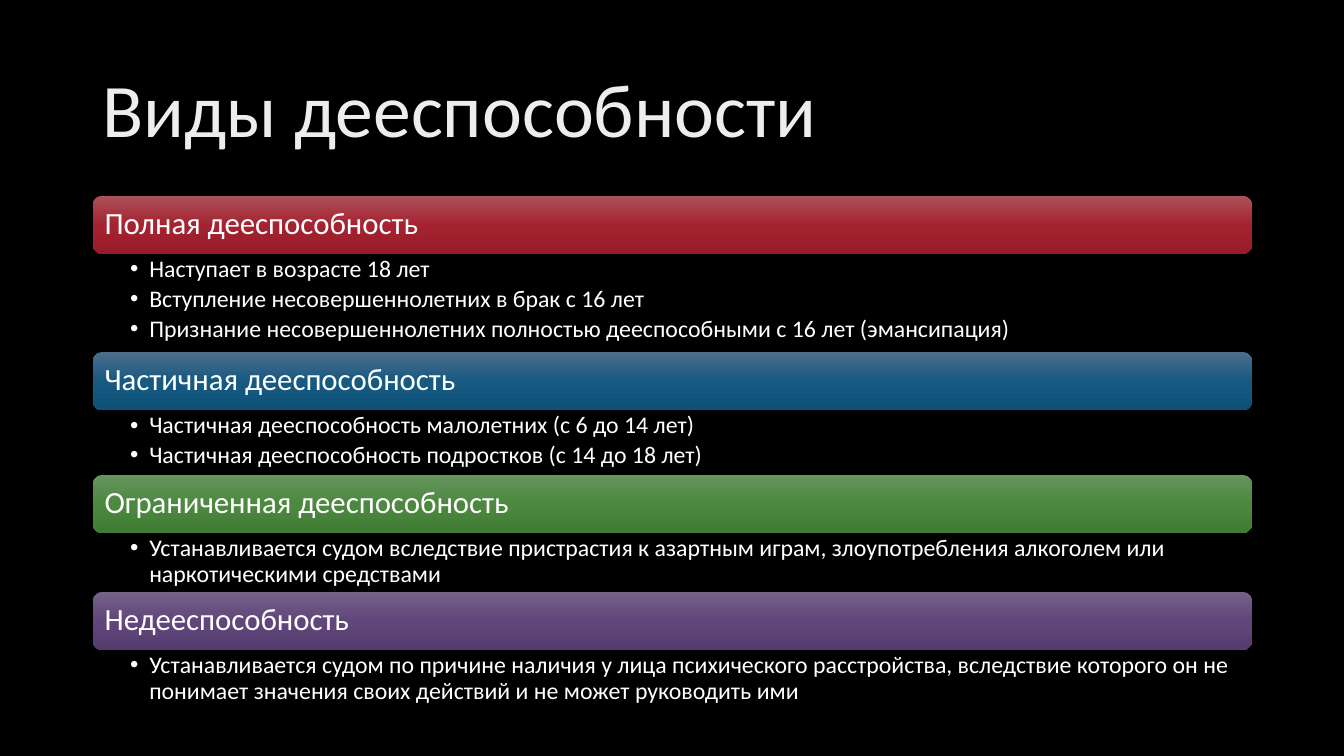
from copy import deepcopy

from pptx import Presentation
from pptx.dml.color import RGBColor
from pptx.enum.shapes import MSO_SHAPE
from pptx.enum.text import MSO_ANCHOR, MSO_AUTO_SIZE, PP_ALIGN
from pptx.oxml.ns import qn
from pptx.util import Emu, Pt

COLOURS = {
    "background": "000000",
    "text": "FFFFFF",
    "title": ["BFBFBF", "EDEDED", "FFFFFF"],
    "red": ["AB5258", "A52331", "981A28"],
    "blue": ["4E6E8C", "165981", "0F5077"],
    "green": ["67945F", "4C883F", "417C35"],
    "purple": ["746388", "60467A", "553C6F"],
}
LEFT, WIDTH = 92, 1150
FIRST_TOP, BAR_HEIGHT = 194, 58
COMPARISON_LAYOUT = 4

SECTIONS = [
    ("Полная дееспособность", "red", 97, [
        "Наступает в возрасте 18 лет",
        "Вступление несовершеннолетних в брак с 16 лет",
        "Признание несовершеннолетних полностью дееспособными с 16 лет (эмансипация)",
    ]),
    ("Частичная дееспособность", "blue", 64, [
        "Частичная дееспособность малолетних (с 6 до 14 лет)",
        "Частичная дееспособность подростков (с 14 до 18 лет)",
    ]),
    ("Ограниченная дееспособность", "green", 58, [
        "Устанавливается судом вследствие пристрастия к азартным играм, "
        "злоупотребления алкоголем или наркотическими средствами",
    ]),
    ("Недееспособность", "purple", 58, [
        "Устанавливается судом по причине наличия у лица психического расстройства, "
        "вследствие которого он не понимает значения своих действий и не может руководить ими",
    ]),
]


def px(length):
    return Emu(length * 9144)


class SlideBuilder:
    font_name = "Calibri"

    def __init__(self, slide):
        self.slide = slide
        background = slide.background.fill
        background.solid()
        background.fore_color.rgb = RGBColor.from_string(COLOURS["background"])

    def place(self, shape, top, height):
        shape.left, shape.top = px(LEFT), px(top)
        shape.width, shape.height = px(WIDTH), px(height)

    def frame(self, shape, anchor, margins):
        frame = shape.text_frame
        frame.word_wrap = True
        frame.auto_size = MSO_AUTO_SIZE.NONE
        frame.vertical_anchor = anchor
        (frame.margin_left, frame.margin_top,
         frame.margin_right, frame.margin_bottom) = map(px, margins)
        return frame

    def format(self, paragraph, size, space_after=0):
        paragraph.alignment = PP_ALIGN.LEFT
        paragraph.line_spacing = 0.9
        paragraph.space_before = Pt(0)
        paragraph.space_after = Pt(space_after)
        for run in paragraph.runs:
            run.font.name = self.font_name
            run.font.size = Pt(size)
            run.font.bold = False
            run.font.color.rgb = RGBColor.from_string(COLOURS["text"])

    def gradient(self, fill, element, colours, middle, angle):
        fill.gradient()
        fill.gradient_angle = 360 - angle
        stop = next(element.iter(qn("a:gs")))
        stop.addnext(deepcopy(stop))
        for stop, colour, position in zip(fill.gradient_stops, colours, (0, middle, 1)):
            stop.color.rgb = RGBColor.from_string(colour)
            stop.position = position

    def title(self, text, top, height, size):
        title = self.slide.shapes.title
        self.place(title, top, height)
        frame = self.frame(title, MSO_ANCHOR.MIDDLE, (10, 5, 10, 5))
        frame.text = text
        paragraph = frame.paragraphs[0]
        self.format(paragraph, size)
        run = paragraph.runs[0]
        self.gradient(run.font.fill, run._r, COLOURS["title"], 0.28, 80)

    def bar(self, text, colour, top):
        bar = self.slide.shapes.add_shape(
            MSO_SHAPE.ROUNDED_RECTANGLE, px(LEFT), px(top), px(WIDTH), px(BAR_HEIGHT))
        bar.shadow.inherit = False
        bar.line.fill.background()
        self.gradient(bar.fill, bar._element.spPr, COLOURS[colour], 0.5, 90)
        frame = self.frame(bar, MSO_ANCHOR.MIDDLE, (9, 9, 9, 9))
        frame.text = text
        self.format(frame.paragraphs[0], 22)

    def bullets(self, placeholder, items, top, height):
        self.place(placeholder, top, height)
        frame = self.frame(placeholder, MSO_ANCHOR.TOP, (37, 3, 17, 3))
        frame.text = "\n".join(items)
        for paragraph in frame.paragraphs:
            properties = paragraph._p.get_or_add_pPr()
            properties.set("marL", str(px(19)))
            properties.set("indent", str(px(-19)))
            bullet = properties.makeelement(qn("a:buChar"), {"char": "•"})
            properties.append(bullet)
            self.format(paragraph, 17, space_after=3)


def main():
    presentation = Presentation()
    presentation.slide_width, presentation.slide_height = px(1333), px(750)
    slide = presentation.slides.add_slide(presentation.slide_layouts[COMPARISON_LAYOUT])
    builder = SlideBuilder(slide)
    builder.title("Виды дееспособности", 40, 145, 54)

    lists = [shape for shape in slide.placeholders if shape.placeholder_format.idx > 0]
    top = FIRST_TOP
    for placeholder, (heading, colour, height, items) in zip(lists, SECTIONS):
        builder.bar(heading, colour, top)
        builder.bullets(placeholder, items, top + BAR_HEIGHT, height)
        top += BAR_HEIGHT + height

    presentation.save("out.pptx")


if __name__ == "__main__":
    main()
